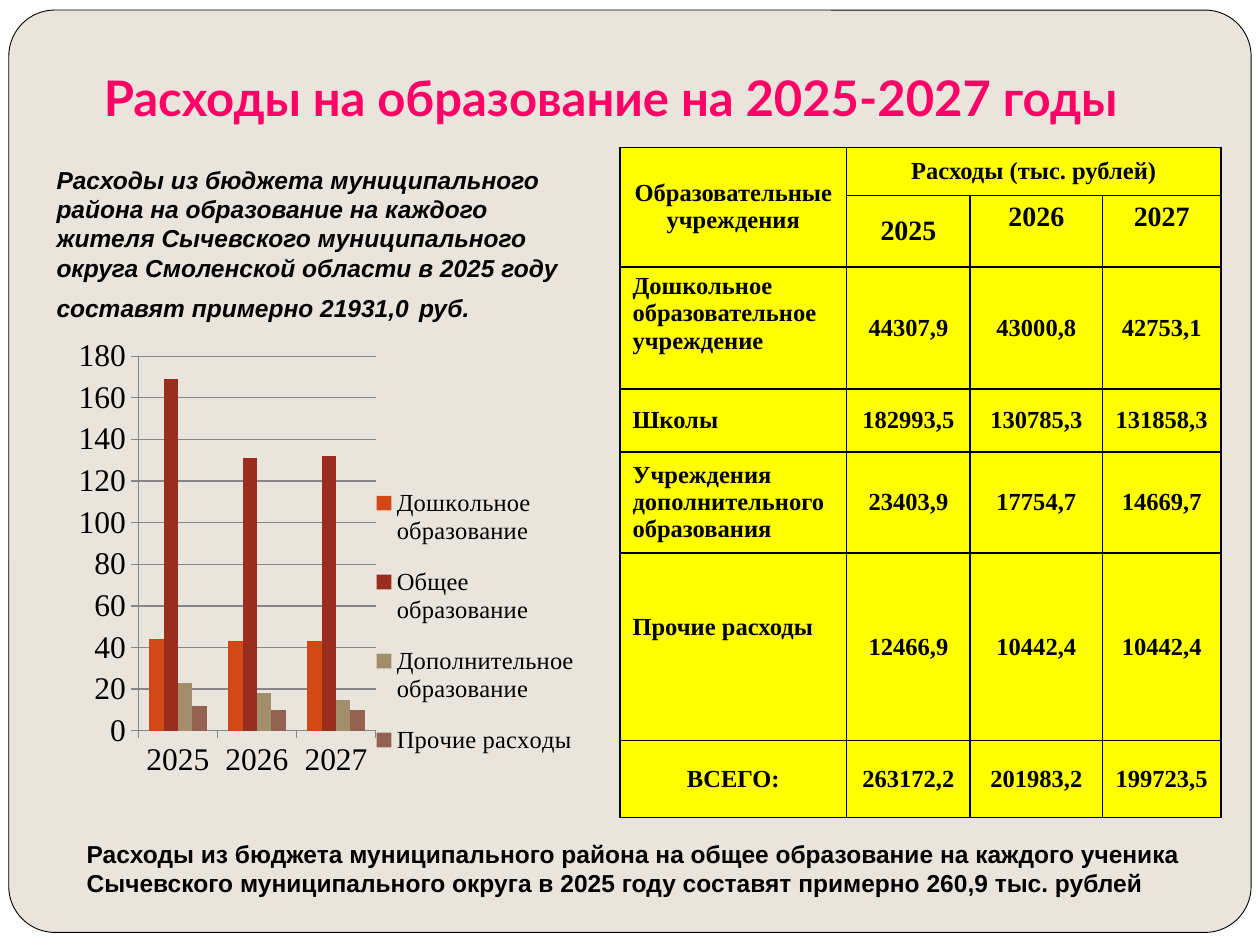
from dataclasses import dataclass

from lxml.etree import SubElement
from pptx import Presentation
from pptx.chart.data import CategoryChartData
from pptx.dml.color import RGBColor
from pptx.enum.chart import XL_CHART_TYPE, XL_LEGEND_POSITION, XL_TICK_MARK
from pptx.enum.shapes import MSO_SHAPE
from pptx.enum.text import MSO_ANCHOR, PP_ALIGN
from pptx.oxml import parse_xml
from pptx.oxml.ns import nsdecls, qn
from pptx.util import Inches, Pt


@dataclass(frozen=True)
class Theme:
    """Colours, fonts and type sizes of the slide."""
    ink: str = "000000"
    panel: str = "E9E5DC"
    title: str = "FF0066"
    cell: str = "FFFF00"
    grid: str = "868686"
    bars: tuple = ("D34817", "9B2D1F", "A28E6A", "956251")
    head: str = "Lato"
    sans: str = "Arial"
    serif: str = "Times New Roman"
    big: int = 28
    gap: int = 20
    axis: int = 18
    year: int = 16
    body: int = 14


def rgb(code):
    """Turn a hex code into a colour."""
    return RGBColor.from_string(code)


def style(font, name, size, color, bold=False, italic=False):
    """Set all the traits of a font."""
    font.name, font.size, font.color.rgb = name, Pt(size), rgb(color)
    font.bold, font.italic = bold, italic


def place(node, index, x, y, w, h, inner=False):
    """Give a chart part a fixed layout."""
    for old in node.findall(qn("c:layout")):
        node.remove(old)
    target = '<c:layoutTarget val="inner"/>' if inner else ""
    sizes = "".join(f'<c:{k} val="{v}"/>' for k, v in zip("xywh", (x, y, w, h)))
    node.insert(index, parse_xml(
        f'<c:layout {nsdecls("c")}><c:manualLayout>{target}'
        f'<c:xMode val="edge"/><c:yMode val="edge"/>{sizes}'
        '</c:manualLayout></c:layout>'))


class Deck:
    """Draws elements on the current slide in one style."""

    def __init__(self, theme):
        """Start a deck with one blank slide."""
        self.theme = theme
        self.file = Presentation()
        self.file.slide_width, self.file.slide_height = Inches(10), Inches(7.5)
        self.slide = self.file.slides.add_slide(self.file.slide_layouts[6])

    def panel(self, *box):
        """Add the rounded backdrop."""
        shape = self.slide.shapes.add_shape(
            MSO_SHAPE.ROUNDED_RECTANGLE, *map(Inches, box))
        shape.adjustments[0] = 0.05
        shape.shadow.inherit = False
        shape.fill.solid()
        shape.fill.fore_color.rgb = rgb(self.theme.panel)
        shape.line.color.rgb = rgb(self.theme.ink)
        shape.line.width = Pt(0.5)

    def text(self, box, words, name, size, color, italic=False,
             align=PP_ALIGN.LEFT, anchor=MSO_ANCHOR.MIDDLE):
        """Add a bold text box and return its paragraph."""
        frame = self.slide.shapes.add_textbox(*map(Inches, box)).text_frame
        frame.word_wrap, frame.vertical_anchor = True, anchor
        para = frame.paragraphs[0]
        para.add_run().text = words
        para.alignment = align
        style(para.font, name, size, color, True, italic)
        return para

    def border(self, cell):
        """Draw all four edges of a cell."""
        props = cell._tc.get_or_add_tcPr()
        for i, side in enumerate(("lnL", "lnR", "lnT", "lnB")):
            line = parse_xml(f'<a:{side} {nsdecls("a")} w="12700"/>')
            fill = SubElement(line, qn("a:solidFill"))
            SubElement(fill, qn("a:srgbClr")).set("val", self.theme.ink)
            props.insert(i, line)

    def cell(self, cell, words, align, size, anchor):
        """Fill and style one table cell."""
        cell.text = words
        cell.vertical_anchor = anchor
        cell.margin_left = cell.margin_right = Inches(
            0.05 if align == PP_ALIGN.CENTER else 0.1)
        cell.fill.solid()
        cell.fill.fore_color.rgb = rgb(self.theme.cell)
        for para in cell.text_frame.paragraphs:
            para.alignment = align
            style(para.font, self.theme.serif, size, self.theme.ink, True)
        self.border(cell)

    def table(self, box, cols, rows, data):
        """Add the table of costs with its merged header."""
        table = self.slide.shapes.add_table(
            len(rows), len(cols), *map(Inches, box)).table
        for col, width in zip(table.columns, cols):
            col.width = Inches(width)
        for row, height in zip(table.rows, rows):
            row.height = Inches(height)
        last = len(rows) - 1
        for r, line in enumerate(data):
            for c, words in enumerate(line):
                label = c == 0 and 1 < r < last
                align = PP_ALIGN.JUSTIFY if label else PP_ALIGN.CENTER
                size = self.theme.year if r == 1 and c else self.theme.body
                top = (r == 1 and c > 1) or (c == 0 and r in (2, 5))
                anchor = MSO_ANCHOR.TOP if top else MSO_ANCHOR.MIDDLE
                self.cell(table.cell(r, c), words, align, size, anchor)
        table.cell(5, 0).margin_top = Inches(0.48)
        table.cell(0, 0).merge(table.cell(1, 0))
        table.cell(0, 1).merge(table.cell(0, 3))

    def chart(self, box, years, series):
        """Add the clustered column chart."""
        data = CategoryChartData()
        data.categories = years
        for name, values in series:
            data.add_series(name, values)
        theme = self.theme
        chart = self.slide.shapes.add_chart(
            XL_CHART_TYPE.COLUMN_CLUSTERED, *map(Inches, box), data).chart
        chart.has_title = False
        style(chart.font, theme.serif, theme.axis, theme.ink)
        plot = chart.plots[0]
        plot.vary_by_categories, plot.gap_width, plot.overlap = False, 150, 0
        for bar, color in zip(plot.series, theme.bars):
            bar.format.fill.solid()
            bar.format.fill.fore_color.rgb = rgb(color)
        axis = chart.value_axis
        axis.minimum_scale, axis.maximum_scale, axis.major_unit = 0, 180, 20
        axis.has_major_gridlines = True
        lines = [axis.major_gridlines.format.line]
        for side in (axis, chart.category_axis):
            side.major_tick_mark = XL_TICK_MARK.OUTSIDE
            lines.append(side.format.line)
        for line in lines:
            line.color.rgb, line.width = rgb(theme.grid), Pt(0.75)
        chart.has_legend = True
        legend = chart.legend
        legend.position = XL_LEGEND_POSITION.RIGHT
        legend.include_in_layout = False
        style(legend.font, theme.serif, theme.body, theme.ink)
        place(chart._chartSpace.chart.plotArea, 0, 0.18, 0.06, 0.43, 0.72, True)
        place(legend._element, 1, 0.63, 0.27, 0.36, 0.6)


def main():
    """Build the slide and save it."""
    theme = Theme()
    deck = Deck(theme)
    years = ["2025", "2026", "2027"]
    deck.panel(0.07, 0.08, 9.86, 7.32)
    deck.text((0, 0.28, 9.69, 0.77), "Расходы на образование на 2025-2027 годы",
              theme.head, theme.big, theme.title,
              align=PP_ALIGN.CENTER, anchor=MSO_ANCHOR.BOTTOM)
    deck.table((4.92, 1.17, 4.77, 5.23), (1.8, 0.98, 1.05, 0.94),
               (0.38, 0.53, 0.97, 0.5, 0.75, 1.49, 0.61), [
        ["Образовательные учреждения", "Расходы (тыс. рублей)", "", ""],
        ["", *years],
        ["Дошкольное образовательное учреждение", "44307,9", "43000,8", "42753,1"],
        ["Школы", "182993,5", "130785,3", "131858,3"],
        ["Учреждения\nдополнительного\nобразования", "23403,9", "17754,7", "14669,7"],
        ["Прочие расходы", "12466,9", "10442,4", "10442,4"],
        ["ВСЕГО:", "263172,2", "201983,2", "199723,5"],
    ])
    note = deck.text(
        (0.35, 1.23, 4.25, 1.42),
        "Расходы из бюджета муниципального района на образование на каждого "
        "жителя Сычевского муниципального округа Смоленской области в 2025 году "
        "составят примерно 21931,0", theme.sans, theme.body, theme.ink, True)
    space = note.add_run()
    space.text, space.font.size = " ", Pt(theme.gap)
    note.add_run().text = "руб."
    deck.text(
        (0.59, 6.66, 9, 0.46),
        "Расходы из бюджета муниципального района на общее образование на каждого "
        "ученика Сычевского муниципального округа в 2025 году составят примерно "
        "260,9 тыс. рублей", theme.sans, theme.body, theme.ink)
    deck.chart((0.31, 2.58, 4.38, 4.13), years, [
        ("Дошкольное образование", (44, 43, 43)),
        ("Общее образование", (169, 131, 132)),
        ("Дополнительное образование", (23, 18, 15)),
        ("Прочие расходы", (12, 10, 10)),
    ])
    deck.file.save("out.pptx")


if __name__ == "__main__":
    main()
